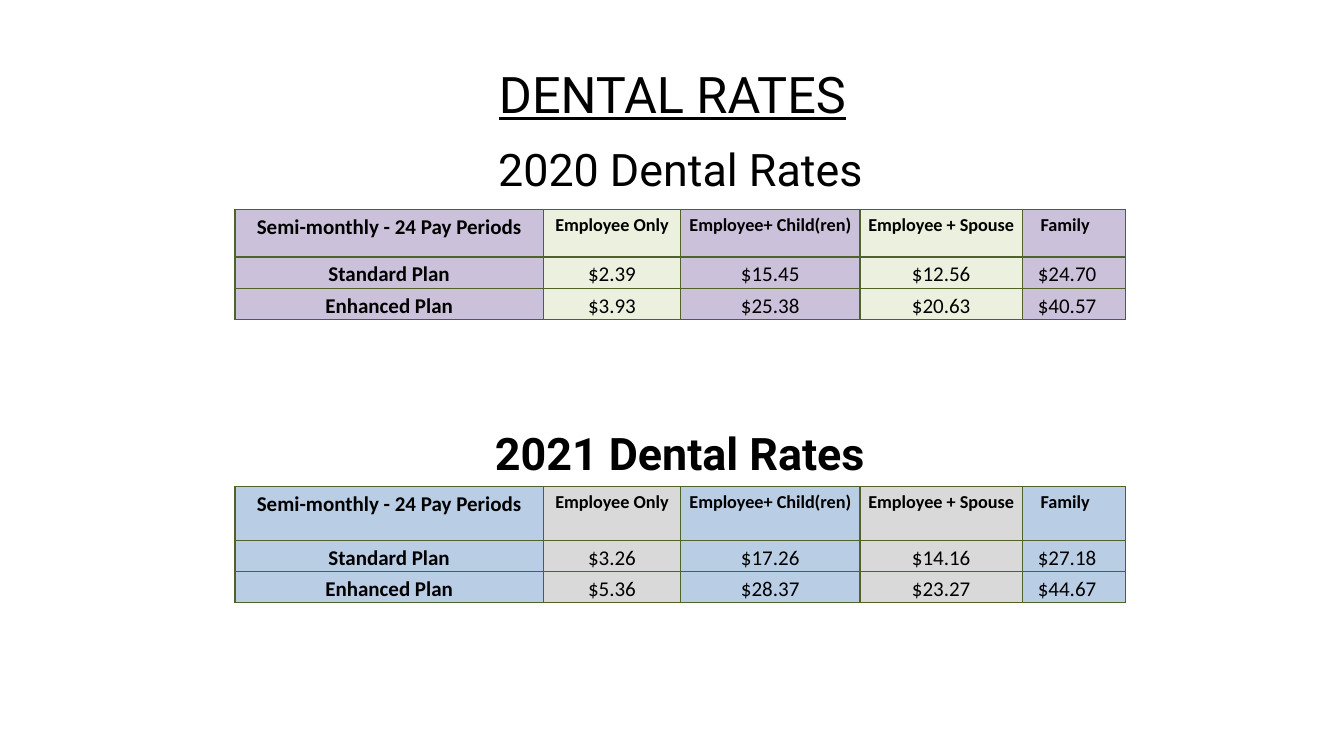
from pptx import Presentation
from pptx.dml.color import RGBColor
from pptx.enum.text import MSO_ANCHOR, PP_ALIGN
from pptx.oxml import parse_xml
from pptx.oxml.ns import nsdecls
from pptx.util import Inches, Pt

BLACK = RGBColor(0x00, 0x00, 0x00)
GREEN = RGBColor(0x4F, 0x62, 0x28)
LILAC = RGBColor(0xCC, 0xC1, 0xDA)
LIGHT_GREEN = RGBColor(0xEB, 0xF1, 0xDE)
LIGHT_BLUE = RGBColor(0xB9, 0xCD, 0xE5)
GRAY = RGBColor(0xD9, 0xD9, 0xD9)

HEADER = ["Semi-monthly - 24 Pay Periods", "Employee Only",
          "Employee+ Child(ren)", "Employee + Spouse", "Family "]
RATES_2020 = [HEADER,
              ["Standard Plan", "$2.39", "$15.45", "$12.56", "$24.70"],
              ["Enhanced Plan", "$3.93", "$25.38", "$20.63", "$40.57"]]
RATES_2021 = [HEADER,
              ["Standard Plan", "$3.26", "$17.26", "$14.16", "$27.18"],
              ["Enhanced Plan", "$5.36", "$28.37", "$23.27", "$44.67"]]
COLUMN_WIDTHS = [3.06, 1.36, 1.78, 1.61, 1.02]
PLAN_ROW_HEIGHT = 0.31


def format_paragraph(paragraph, font_name, size, bold=False, underline=False):
    paragraph.alignment = PP_ALIGN.CENTER
    for run in paragraph.runs:
        font = run.font
        font.name, font.size = font_name, Pt(size)
        font.bold, font.underline = bold, underline
        font.color.rgb = BLACK


def add_heading(slide, text, left, top, width, height, size,
                anchor=MSO_ANCHOR.TOP, **style):
    box = slide.shapes.add_textbox(
        Inches(left), Inches(top), Inches(width), Inches(height))
    text_frame = box.text_frame
    text_frame.word_wrap = True
    text_frame.vertical_anchor = anchor
    text_frame.text = text
    format_paragraph(text_frame.paragraphs[0], "Roboto", size, **style)


def add_borders(cell):
    properties = cell._tc.get_or_add_tcPr()
    for side in ("lnL", "lnR", "lnT", "lnB"):
        properties.append(parse_xml(
            f'<a:{side} {nsdecls("a")} w="{Pt(1)}"><a:solidFill>'
            f'<a:srgbClr val="{GREEN}"/></a:solidFill></a:{side}>'))


def add_rate_table(slide, rates, top, header_height, fills):
    heights = [header_height] + [PLAN_ROW_HEIGHT] * (len(rates) - 1)
    table = slide.shapes.add_table(
        len(rates), len(HEADER), Inches(2.33), Inches(top),
        Inches(sum(COLUMN_WIDTHS)), Inches(sum(heights))).table
    for column, width in zip(table.columns, COLUMN_WIDTHS):
        column.width = Inches(width)
    for row, height in zip(table.rows, heights):
        row.height = Inches(height)

    for row_index, values in enumerate(rates):
        for column_index, value in enumerate(values):
            cell = table.cell(row_index, column_index)
            is_header, is_label = row_index == 0, column_index == 0
            is_family = column_index == len(HEADER) - 1
            cell.margin_left = Inches(0.07)
            cell.margin_right = Inches(0.2 if is_family else 0.07)
            cell.margin_top = cell.margin_bottom = 0
            add_borders(cell)
            cell.fill.solid()
            cell.fill.fore_color.rgb = fills[column_index % 2]
            cell.text_frame.text = value
            paragraph = cell.text_frame.paragraphs[0]
            paragraph.line_spacing = 1.19
            format_paragraph(paragraph, "Calibri",
                             13 if is_header and not is_label else 15,
                             bold=is_header or is_label)


def main():
    presentation = Presentation()
    presentation.slide_width = Inches(13.33)
    presentation.slide_height = Inches(7.5)
    slide = presentation.slides.add_slide(presentation.slide_layouts[6])

    # Slide title
    add_heading(slide, "DENTAL RATES", 0.67, 0.3, 12, 1.25, 36,
                anchor=MSO_ANCHOR.MIDDLE, underline=True)

    # 2020 rates
    add_heading(slide, "2020 Dental Rates", 2.25, 1.36, 9, 1.25, 32)
    add_rate_table(slide, RATES_2020, 2.08, 0.47, (LILAC, LIGHT_GREEN))

    # 2021 rates
    add_heading(slide, "2021 Dental Rates", 4.08, 4.17, 5.33, 0.64, 32, bold=True)
    add_rate_table(slide, RATES_2021, 4.83, 0.53, (LIGHT_BLUE, GRAY))

    presentation.save("out.pptx")


if __name__ == "__main__":
    main()
